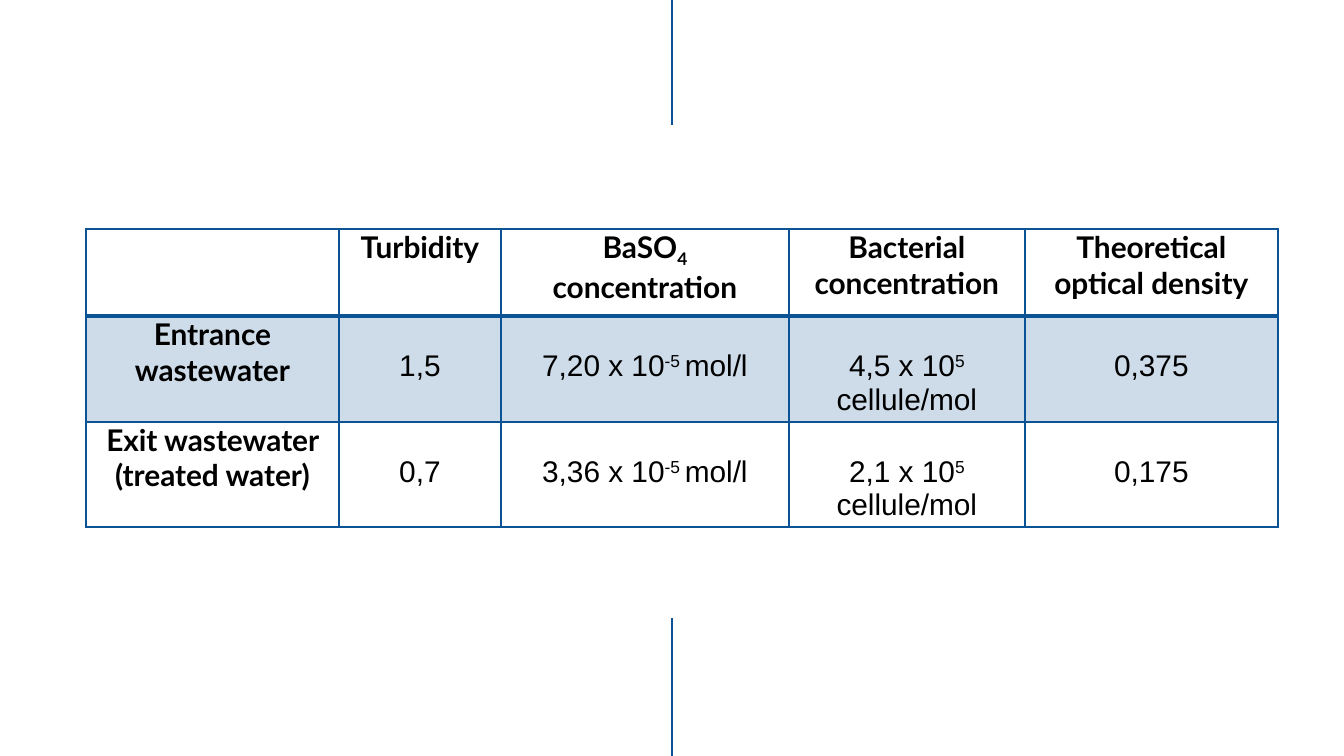
from dataclasses import dataclass

from lxml.etree import SubElement
from pptx import Presentation
from pptx.dml.color import RGBColor
from pptx.enum.shapes import MSO_CONNECTOR as Connector
from pptx.enum.text import PP_ALIGN as Align
from pptx.oxml import parse_xml
from pptx.oxml.ns import nsdecls, qn
from pptx.util import Emu, Pt

EMU_PER_PX = 914400 / 134.4
SLIDE_WIDTH, SLIDE_HEIGHT = 1344, 756
BLUE = RGBColor(0x0B, 0x53, 0x94)
BLACK = RGBColor(0x00, 0x00, 0x00)

TABLE_LEFT, TABLE_TOP = 86, 229
COLUMN_WIDTHS = [253, 162, 288, 236, 253]
ROW_HEIGHTS = [87, 106, 105]
SIDE_MARGIN = 10
VALUE_TOP_MARGIN = 34
TINT_ALPHA = 20000
SUBSCRIPT, SUPERSCRIPT = -25000, 30000


@dataclass(frozen=True)
class Part:
    text: str
    baseline: int = 0


@dataclass(frozen=True)
class Rule:
    top: int
    bottom: int


def label(text: str) -> list[Part]:
    return [Part(text)]


def power_of_ten(factor: str, exponent: str, unit: str) -> list[Part]:
    return [Part(f"{factor} x 10"), Part(f"{exponent} ", SUPERSCRIPT), Part(unit)]


RULES = [Rule(618, SLIDE_HEIGHT), Rule(0, 125)]
ROWS = [
    [
        [],
        label("Turbidity"),
        [Part("BaSO"), Part("4", SUBSCRIPT), Part("\n"), Part("concentration")],
        label("Bacterial concentration"),
        label("Theoretical optical density"),
    ],
    [
        label("Entrance wastewater"),
        label("1,5"),
        power_of_ten("7,20", "-5", "mol/l"),
        power_of_ten("4,5", "5", "cellule/mol"),
        label("0,375"),
    ],
    [
        label("Exit wastewater (treated water)"),
        label("0,7"),
        power_of_ten("3,36", "-5", "mol/l"),
        power_of_ten("2,1", "5", "cellule/mol"),
        label("0,175"),
    ],
]


def px(length: int) -> Emu:
    return Emu(round(length * EMU_PER_PX))


def draw_rule(slide, rule: Rule) -> None:
    middle = px(SLIDE_WIDTH // 2)
    line = slide.shapes.add_connector(
        Connector.STRAIGHT, middle, px(rule.top), middle, px(rule.bottom)
    )
    line.line.color.rgb = BLUE
    line.line.width = Pt(1.5)
    SubElement(line._element.spPr, qn("a:effectLst"))


def write_parts(para, parts: list[Part], *, font: str, bold: bool) -> None:
    para.alignment = Align.CENTER
    for part in parts:
        if part.text == "\n":
            para.add_line_break()
            continue
        span = para.add_run()
        span.text = part.text
        span.font.name = font
        span.font.size = Pt(16)
        span.font.bold = bold
        span.font.color.rgb = BLACK
        if part.baseline:
            span.font._element.set("baseline", str(part.baseline))


def tint_cell(cell) -> None:
    cell.fill.solid()
    cell.fill.fore_color.rgb = BLUE
    color = cell._tc.tcPr.find(f".//{qn('a:srgbClr')}")
    SubElement(color, qn("a:alpha")).set("val", str(TINT_ALPHA))


def border_cell(cell, *, top: int, bottom: int) -> None:
    """Put the four edges, widths in points, ahead of the cell's fill."""
    properties = cell._tc.get_or_add_tcPr()
    widths = {"lnL": 1, "lnR": 1, "lnT": top, "lnB": bottom}
    for index, (edge, width) in enumerate(widths.items()):
        properties.insert(index, parse_xml(
            f'<a:{edge} {nsdecls("a")} w="{Pt(width)}"><a:solidFill>'
            f'<a:srgbClr val="{BLUE}"/></a:solidFill></a:{edge}>'
        ))


def draw_table(slide) -> None:
    table = slide.shapes.add_table(
        len(ROWS), len(COLUMN_WIDTHS), px(TABLE_LEFT), px(TABLE_TOP),
        px(sum(COLUMN_WIDTHS)), px(sum(ROW_HEIGHTS)),
    ).table
    table.first_row = table.horz_banding = False
    for column, width in zip(table.columns, COLUMN_WIDTHS):
        column.width = px(width)
    for row, height in zip(table.rows, ROW_HEIGHTS):
        row.height = px(height)

    for row_index, row_parts in enumerate(ROWS):
        for column_index, parts in enumerate(row_parts):
            cell = table.cell(row_index, column_index)
            is_heading = row_index == 0 or column_index == 0
            cell.margin_left = cell.margin_right = px(SIDE_MARGIN)
            cell.margin_top = px(0 if is_heading else VALUE_TOP_MARGIN)
            cell.margin_bottom = 0
            write_parts(
                cell.text_frame.paragraphs[0], parts,
                font="Lato" if is_heading else "Arial", bold=is_heading,
            )
            if row_index == 1:
                tint_cell(cell)
            else:
                cell.fill.background()
            border_cell(
                cell,
                top=2 if row_index == 1 else 1,
                bottom=2 if row_index == 0 else 1,
            )


def main() -> None:
    deck = Presentation()
    deck.slide_width, deck.slide_height = px(SLIDE_WIDTH), px(SLIDE_HEIGHT)
    page = deck.slides.add_slide(deck.slide_layouts[6])
    for rule in RULES:
        draw_rule(page, rule)
    draw_table(page)
    deck.save("out.pptx")


if __name__ == "__main__":
    main()
